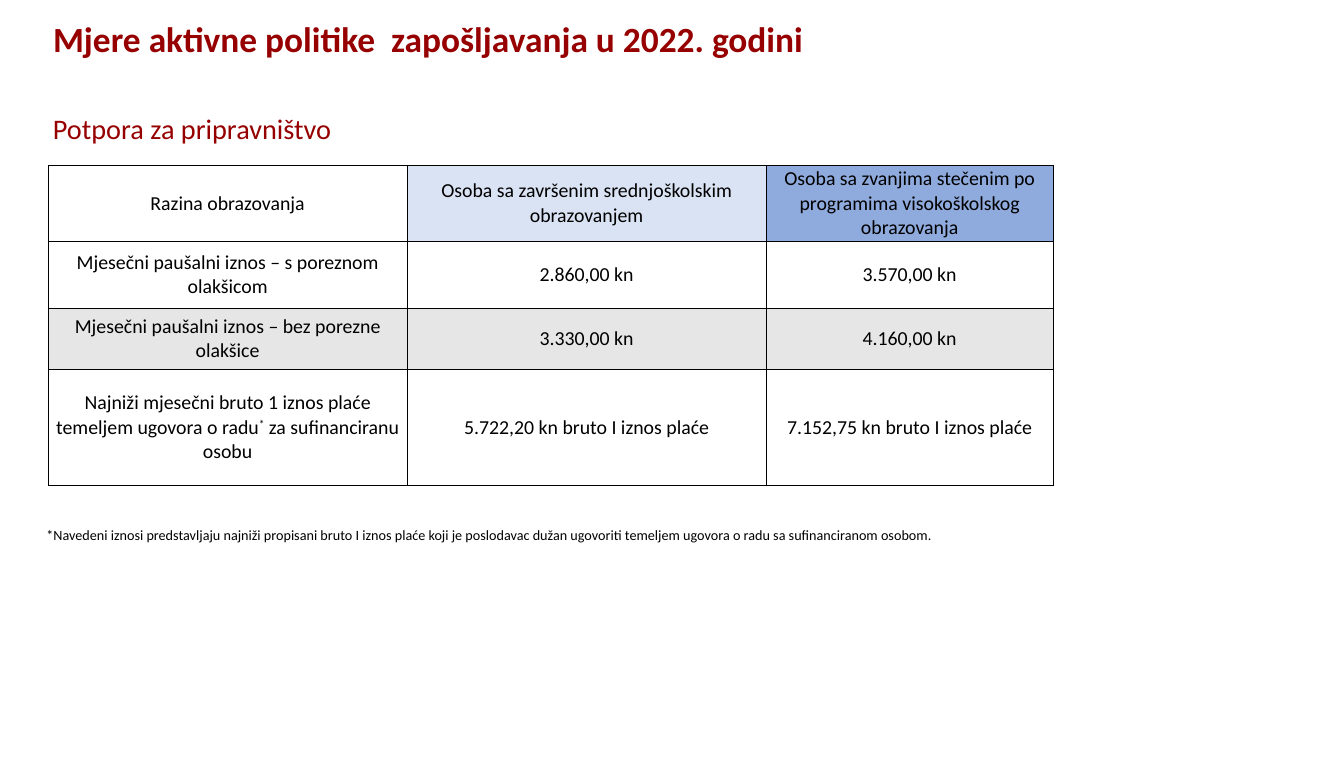
from lxml.etree import SubElement
from pptx import Presentation
from pptx.dml.color import RGBColor
from pptx.enum.text import MSO_ANCHOR, MSO_AUTO_SIZE, PP_ALIGN
from pptx.oxml import parse_xml
from pptx.oxml.ns import nsdecls, qn
from pptx.util import Cm, Pt

FONT = "Calibri"
RED = RGBColor(0x96, 0x00, 0x00)
BLACK = RGBColor(0x00, 0x00, 0x00)
WHITE = RGBColor(0xFF, 0xFF, 0xFF)
PALE = RGBColor(0xDA, 0xE3, 0xF3)
BLUE = RGBColor(0x8F, 0xAA, 0xDC)
GREY = RGBColor(0xE7, 0xE6, 0xE6)

COLS = [17.91, 17.88, 14.33]
ROWS = [3.45, 3.33, 3.05, 5.79]
FILLS = [[WHITE, PALE, BLUE], [WHITE] * 3, [GREY] * 3, [WHITE] * 3]
# An asterisk inside a cell is set as superscript.
CELLS = [
    ["Razina obrazovanja",
     "Osoba sa završenim srednjoškolskim obrazovanjem",
     "Osoba sa zvanjima stečenim po programima visokoškolskog obrazovanja"],
    ["Mjesečni paušalni iznos – s poreznom olakšicom",
     "2.860,00 kn", "3.570,00 kn"],
    ["Mjesečni paušalni iznos – bez porezne olakšice",
     "3.330,00 kn", "4.160,00 kn"],
    ["Najniži mjesečni bruto 1 iznos plaće temeljem ugovora o radu* "
     "za sufinanciranu osobu",
     "5.722,20 kn bruto I iznos plaće", "7.152,75 kn bruto I iznos plaće"],
]
NOTE = ("*Navedeni iznosi predstavljaju najniži propisani bruto I iznos plaće "
        "koji je poslodavac dužan ugovoriti temeljem ugovora o radu sa "
        "sufinanciranom osobom.")


def style(run, size, color, bold=False):
    run.font.name = FONT
    run.font.size = Pt(size)
    run.font.bold = bold
    run.font.color.rgb = color


def place(shape, left, top, width, height):
    shape.left, shape.top = Cm(left), Cm(top)
    shape.width, shape.height = Cm(width), Cm(height)


def write(shape, text, size, color, bold=False, anchor=MSO_ANCHOR.TOP,
          spacing=0.9):
    frame = shape.text_frame
    frame.text = text
    frame.word_wrap = True
    frame.auto_size = MSO_AUTO_SIZE.NONE
    frame.vertical_anchor = anchor
    para = frame.paragraphs[0]
    para.alignment = PP_ALIGN.LEFT
    para.line_spacing = spacing
    style(para.runs[0], size, color, bold)


def add_text(slide, box, *args, **kwargs):
    shape = slide.shapes.add_textbox(0, 0, 0, 0)
    place(shape, *box)
    write(shape, *args, **kwargs)


def add_edges(cell):
    """Draw a thin black line on all four sides of the cell."""
    props = cell._tc.get_or_add_tcPr()
    for index, side in enumerate("LRTB"):
        line = parse_xml(f'<a:ln{side} {nsdecls("a")} w="12700"/>')
        fill = SubElement(line, qn("a:solidFill"))
        SubElement(fill, qn("a:srgbClr"), val=str(BLACK))
        props.insert(index, line)


def fill_cell(cell, text, color):
    cell.fill.solid()
    cell.fill.fore_color.rgb = color
    add_edges(cell)
    cell.vertical_anchor = MSO_ANCHOR.MIDDLE
    cell.margin_left = cell.margin_right = Cm(0.15)
    cell.margin_top = cell.margin_bottom = Cm(0.08)
    para = cell.text_frame.paragraphs[0]
    para.alignment = PP_ALIGN.CENTER
    for part in text.replace("*", "|*|").split("|"):
        run = para.add_run()
        run.text = part
        style(run, 28, BLACK)
        if part == "*":
            run._r.get_or_add_rPr().set("baseline", "30000")


def add_grid(slide, left, top):
    frame = slide.shapes.add_table(len(ROWS), len(COLS), Cm(left), Cm(top),
                                   Cm(sum(COLS)), Cm(sum(ROWS)))
    table = frame.table
    table.first_row = table.horz_banding = False
    for col, width in zip(table.columns, COLS):
        col.width = Cm(width)
    for row, height, texts, fills in zip(table.rows, ROWS, CELLS, FILLS):
        row.height = Cm(height)
        for cell, text, fill in zip(row.cells, texts, fills):
            fill_cell(cell, text, fill)


def main():
    deck = Presentation()
    deck.slide_width, deck.slide_height = Cm(67), Cm(38)
    slide = deck.slides.add_slide(deck.slide_layouts[5])
    title = slide.shapes.title
    place(title, 2.39, 0.84, 41.58, 2.44)
    write(title, "Mjere aktivne politike  zapošljavanja u 2022. godini",
          50, RED, bold=True, anchor=MSO_ANCHOR.MIDDLE)
    add_text(slide, (2.39, 5.59, 62.15, 1.9), "Potpora za pripravništvo",
             40, RED)
    add_grid(slide, 2.39, 8.25)
    add_text(slide, (2.06, 26.14, 52.96, 1.12), NOTE, 20, BLACK, spacing=1.0)
    deck.save("out.pptx")


if __name__ == "__main__":
    main()
